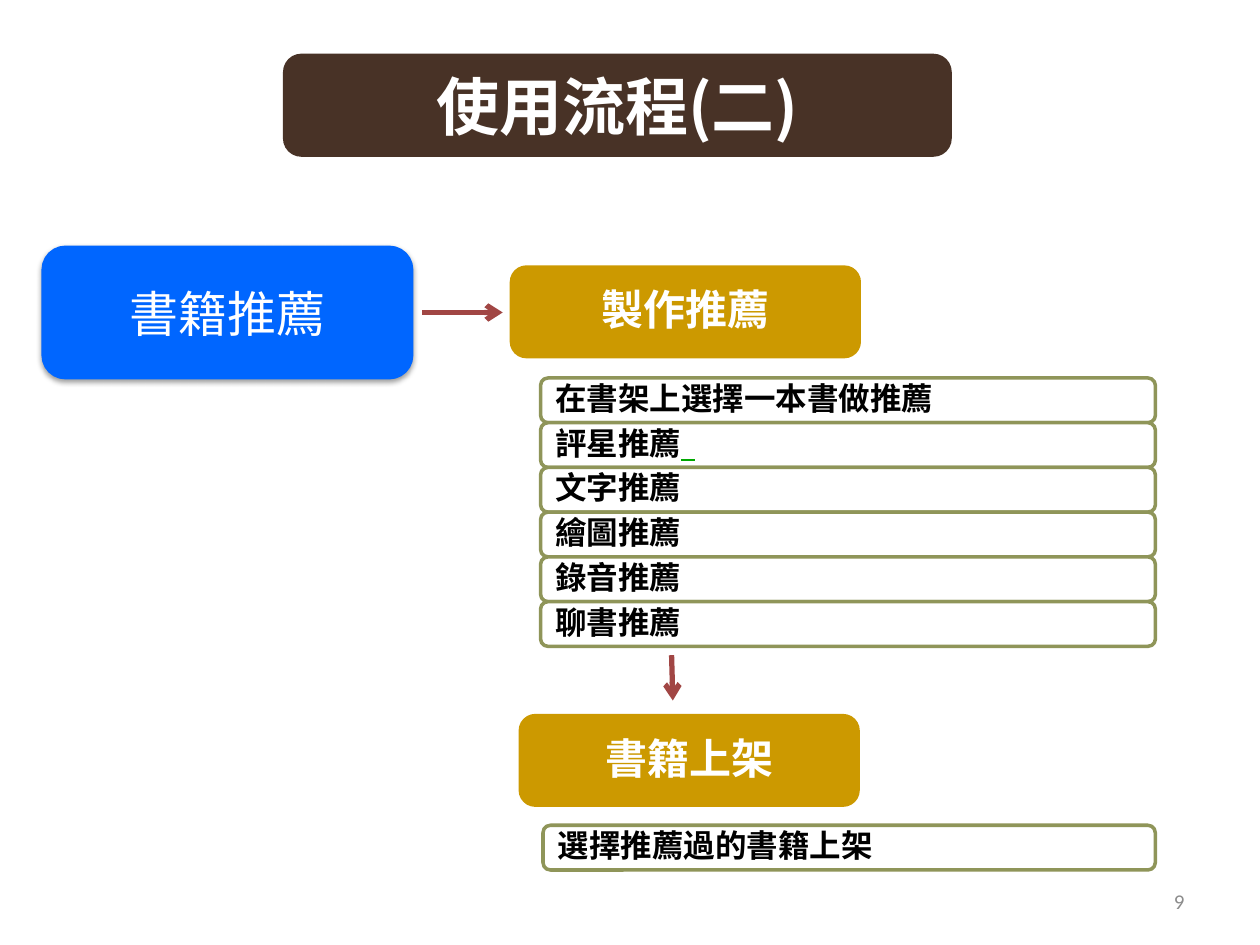
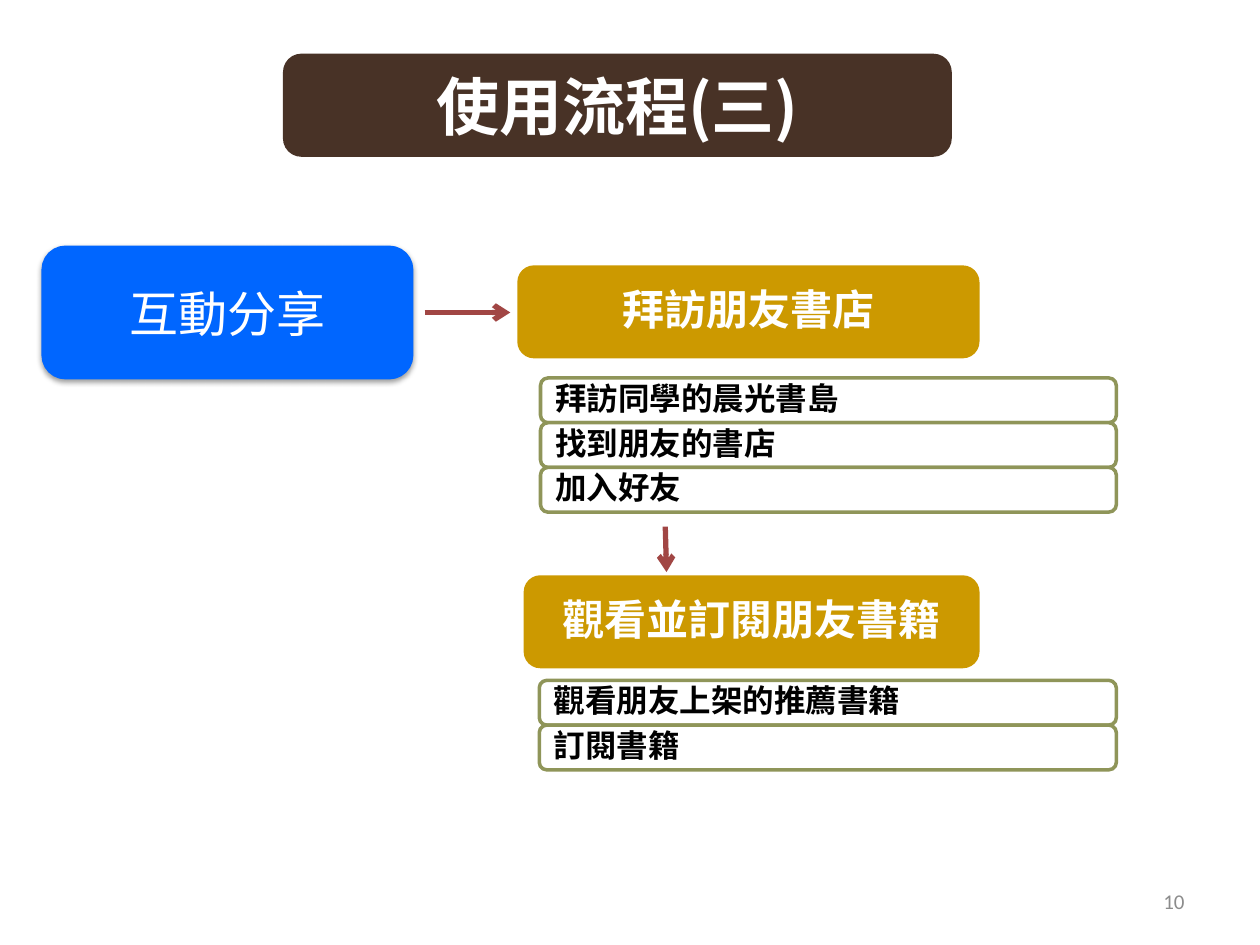
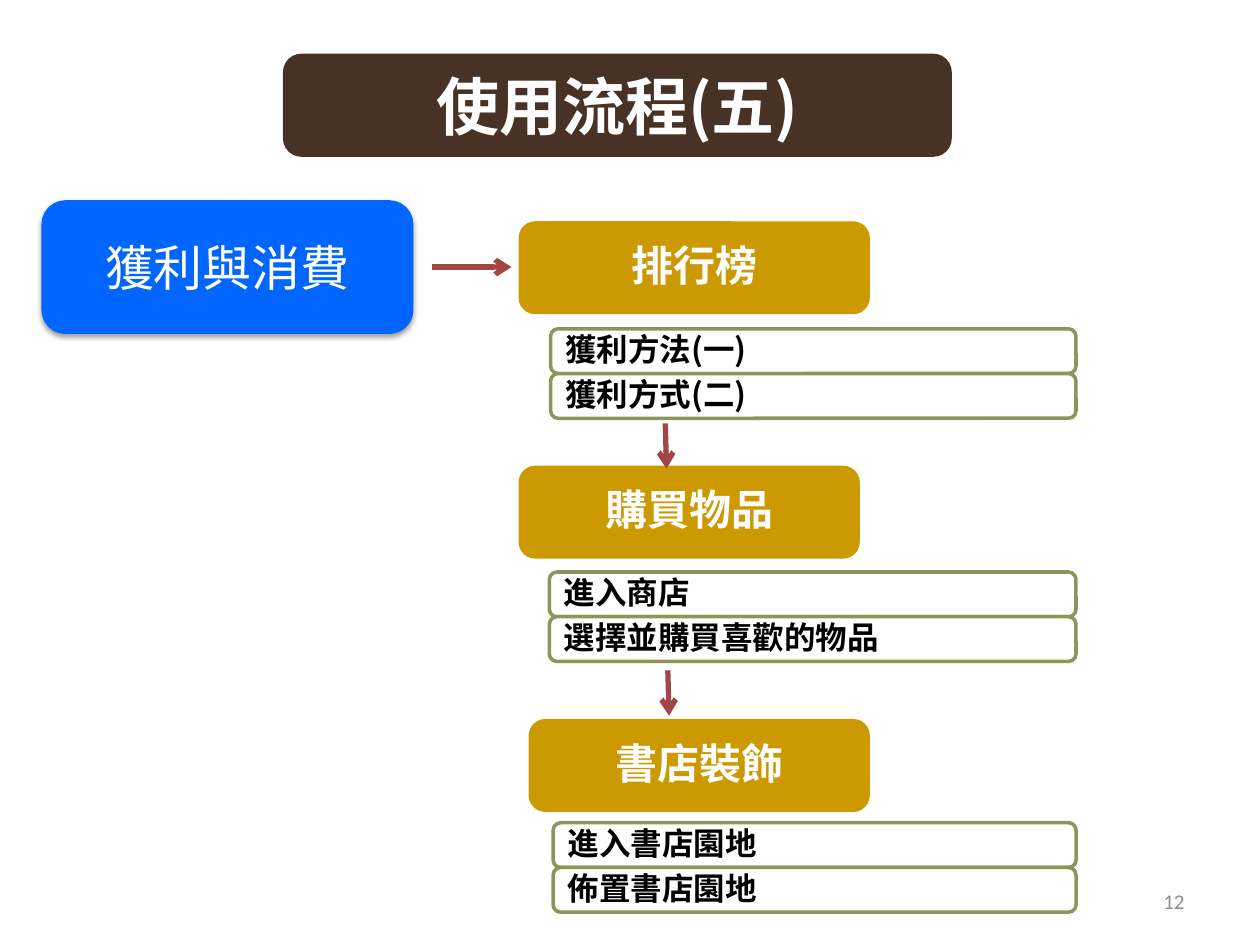
"""Build three slides that show the steps of a reading platform."""
from dataclasses import dataclass
from typing import Any, NamedTuple, Optional

from lxml import etree
from pptx import Presentation
from pptx.dml.color import RGBColor
from pptx.enum.shapes import MSO_CONNECTOR, MSO_SHAPE
from pptx.enum.text import MSO_ANCHOR, PP_ALIGN
from pptx.oxml.ns import qn
from pptx.util import Inches, Pt

ROUNDED = MSO_SHAPE.ROUNDED_RECTANGLE
STRAIGHT = MSO_CONNECTOR.STRAIGHT
MIDDLE = MSO_ANCHOR.MIDDLE
LEFT, CENTER, RIGHT = PP_ALIGN.LEFT, PP_ALIGN.CENTER, PP_ALIGN.RIGHT

WHITE = RGBColor(0xFF, 0xFF, 0xFF)
BLACK = RGBColor(0x00, 0x00, 0x00)
BROWN = RGBColor(0x48, 0x32, 0x26)
BLUE = RGBColor(0x00, 0x66, 0xFF)
GOLD = RGBColor(0xCC, 0x99, 0x00)
OLIVE = RGBColor(0x8F, 0x95, 0x59)
RED = RGBColor(0xA1, 0x46, 0x44)
GREEN = RGBColor(0x00, 0xA8, 0x00)
GRAY = RGBColor(0x8C, 0x8C, 0x8C)

CJK_FONT = "Noto Sans CJK SC"
HEADING_HEIGHT = Inches(0.71)
ROW_HEIGHT = HEADING_HEIGHT // 2
TOPIC_LEFT, TOPIC_WIDTH, TOPIC_HEIGHT = Inches(0.35), Inches(2.91), Inches(1.02)
ARROW_GAP = Inches(0.07)
DOWN_SHIFT, DOWN_LENGTH = Inches(0.01), Inches(0.36)


class Span(NamedTuple):
    """A piece of text with its own colour and underline."""
    text: str
    color: RGBColor
    underline: Optional[bool] = None


class Frame(NamedTuple):
    """The place of a box."""
    left: int
    top: int
    width: int
    height: int


@dataclass(frozen=True)
class BoxStyle:
    """The look of one kind of rounded box."""
    fill: RGBColor
    line: RGBColor
    color: RGBColor
    font: dict[str, Any]
    line_width: float = 2
    align: PP_ALIGN = CENTER
    tight: bool = False
    shadow: bool = False


@dataclass(frozen=True)
class Step:
    """A gold heading, the rows under it and the arrow that leads down to it."""
    heading: str
    left: float
    top: float
    width: float
    rows_left: float
    rows_top: float
    rows: tuple[str, ...]
    arrow_from: Optional[tuple[float, float]] = None


@dataclass(frozen=True)
class Flow:
    """The content of one slide."""
    title: str
    topic: str
    topic_top: float
    arrow_left: float
    rows_right: float
    number: int
    steps: tuple[Step, ...]


def cjk(size: float, bold: bool) -> dict[str, Any]:
    """Return format values for Chinese text."""
    return {"name": CJK_FONT, "size": Pt(size), "bold": bold}


TITLE = BoxStyle(BROWN, BROWN, WHITE, cjk(36, True))
TOPIC = BoxStyle(BLUE, BLUE, WHITE, cjk(28, False), line_width=3, shadow=True)
HEADING = BoxStyle(GOLD, GOLD, WHITE, cjk(24, True), tight=True)
ROW = BoxStyle(WHITE, OLIVE, BLACK, cjk(18, True), align=LEFT, tight=True)
NUMBER_FONT = {"name": "Calibri", "size": Pt(12)}

TITLE_FRAME = Frame(Inches(2.26), Inches(0.44), Inches(5.28), Inches(0.79))
NUMBER_FRAME = Frame(Inches(7.17), Inches(6.95), Inches(2.33), Inches(0.4))
ROW_TAILS = {"評星推薦": Span("  ", GREEN, True)}

FLOWS = (
    Flow("使用流程(二)", "書籍推薦", 1.97, 3.35, 9.17, 9, (
        Step("製作推薦", 4.06, 2.12, 2.76, 4.29, 3,
             ("在書架上選擇一本書做推薦", "評星推薦", "文字推薦",
              "繪圖推薦", "錄音推薦", "聊書推薦")),
        Step("書籍上架", 4.13, 5.68, 2.68, 4.31, 6.55,
             ("選擇推薦過的書籍上架",), (5.33, 5.2)),
    )),
    Flow("使用流程(三)", "互動分享", 1.97, 3.37, 8.86, 10, (
        Step("拜訪朋友書店", 4.12, 2.12, 3.64, 4.29, 3,
             ("拜訪同學的晨光書島", "找到朋友的書店", "加入好友")),
        Step("觀看並訂閱朋友書籍", 4.17, 4.58, 3.59, 4.28, 5.4,
             ("觀看朋友上架的推薦書籍", "訂閱書籍"), (5.28, 4.18)),
    )),
    Flow("使用流程(五)", "獲利與消費", 1.61, 3.43, 8.54, 12, (
        Step("排行榜", 4.13, 1.77, 2.76, 4.37, 2.61,
             ("獲利方法(一)", "獲利方式(二)")),
        Step("購買物品", 4.13, 3.71, 2.68, 4.36, 4.54,
             ("進入商店", "選擇並購買喜歡的物品"), (5.28, 3.36)),
        Step("書店裝飾", 4.21, 5.72, 2.68, 4.39, 6.53,
             ("進入書店園地", "佈置書店園地"), (5.3, 5.32)),
    )),
)


def add_span(para: Any, span: Span, font: dict[str, Any]) -> None:
    """Add a run with the given format values."""
    run = para.add_run()
    run.text = span.text
    for key, value in {**font, "underline": span.underline}.items():
        setattr(run.font, key, value)
    run.font.color.rgb = span.color
    east_asian = etree.SubElement(run._r.get_or_add_rPr(), qn("a:ea"))
    east_asian.set("typeface", font["name"])


def add_shadow(box: Any) -> None:
    """Give a box a soft shadow below it."""
    effects = box.element.spPr.find(qn("a:effectLst"))
    outer = etree.SubElement(effects, qn("a:outerShdw"), blurRad="40000",
                             dist="20000", dir="5400000", rotWithShape="0")
    color = etree.SubElement(outer, qn("a:srgbClr"), val=str(BLACK))
    etree.SubElement(color, qn("a:alpha"), val="38000")


def add_box(page: Any, frame: Frame, style: BoxStyle, *spans: str | Span) -> None:
    """Draw a rounded box with one paragraph."""
    box = page.shapes.add_shape(ROUNDED, *frame)
    box.shadow.inherit = False
    box.fill.solid()
    box.fill.fore_color.rgb = style.fill
    box.line.color.rgb = style.line
    box.line.width = Pt(style.line_width)
    if style.shadow:
        add_shadow(box)
    text = box.text_frame
    text.vertical_anchor = MIDDLE
    para = text.paragraphs[0]
    para.alignment = style.align
    if style.tight:
        text.margin_left = text.margin_right = Inches(0.1)
        text.margin_top = text.margin_bottom = 0
        para.line_spacing = 0.9
        after = etree.SubElement(para._p.get_or_add_pPr(), qn("a:spcAft"))
        etree.SubElement(after, qn("a:spcPct"), val="35000")
    for span in spans:
        add_span(para, span if isinstance(span, Span) else Span(span, style.color),
                 style.font)


def add_arrow(page: Any, left: int, top: int, right: int, bottom: int) -> None:
    """Draw a red arrow between two points."""
    arrow = page.shapes.add_connector(STRAIGHT, left, top, right, bottom)
    arrow.line.color.rgb = RED
    arrow.line.width = Pt(3)
    properties = arrow.element.spPr
    etree.SubElement(properties.find(qn("a:ln")), qn("a:tailEnd"), type="arrow")
    etree.SubElement(properties, qn("a:effectLst"))


def add_number(page: Any, number: int) -> None:
    """Write the page number at the bottom right."""
    text = page.shapes.add_textbox(*NUMBER_FRAME).text_frame
    text.word_wrap = True
    text.vertical_anchor = MIDDLE
    para = text.paragraphs[0]
    para.alignment = RIGHT
    add_span(para, Span(str(number), GRAY), NUMBER_FONT)


def add_step(page: Any, step: Step, rows_right: float) -> None:
    """Draw a heading, its rows and the arrow above it."""
    heading = Frame(Inches(step.left), Inches(step.top), Inches(step.width), HEADING_HEIGHT)
    add_box(page, heading, HEADING, step.heading)
    left, width = Inches(step.rows_left), Inches(rows_right - step.rows_left)
    for index, row in enumerate(step.rows):
        top = Inches(step.rows_top) + index * ROW_HEIGHT
        spans = [row, ROW_TAILS[row]] if row in ROW_TAILS else [row]
        add_box(page, Frame(left, top, width, ROW_HEIGHT), ROW, *spans)
    if step.arrow_from:
        x, y = map(Inches, step.arrow_from)
        add_arrow(page, x, y, x + DOWN_SHIFT, y + DOWN_LENGTH)


def add_flow(deck: Any, flow: Flow) -> None:
    """Add one slide with its title, topic and steps."""
    page = deck.slides.add_slide(deck.slide_layouts[6])
    add_box(page, TITLE_FRAME, TITLE, flow.title)
    topic = Frame(TOPIC_LEFT, Inches(flow.topic_top), TOPIC_WIDTH, TOPIC_HEIGHT)
    add_box(page, topic, TOPIC, flow.topic)
    middle = topic.top + topic.height // 2
    add_arrow(page, Inches(flow.arrow_left), middle,
              Inches(flow.steps[0].left) - ARROW_GAP, middle)
    for step in flow.steps:
        add_step(page, step, flow.rows_right)
    add_number(page, flow.number)


def main() -> None:
    """Build and save the deck."""
    deck = Presentation()
    deck.slide_width, deck.slide_height = Inches(10), Inches(7.5)
    for flow in FLOWS:
        add_flow(deck, flow)
    deck.save("out.pptx")


if __name__ == "__main__":
    main()
